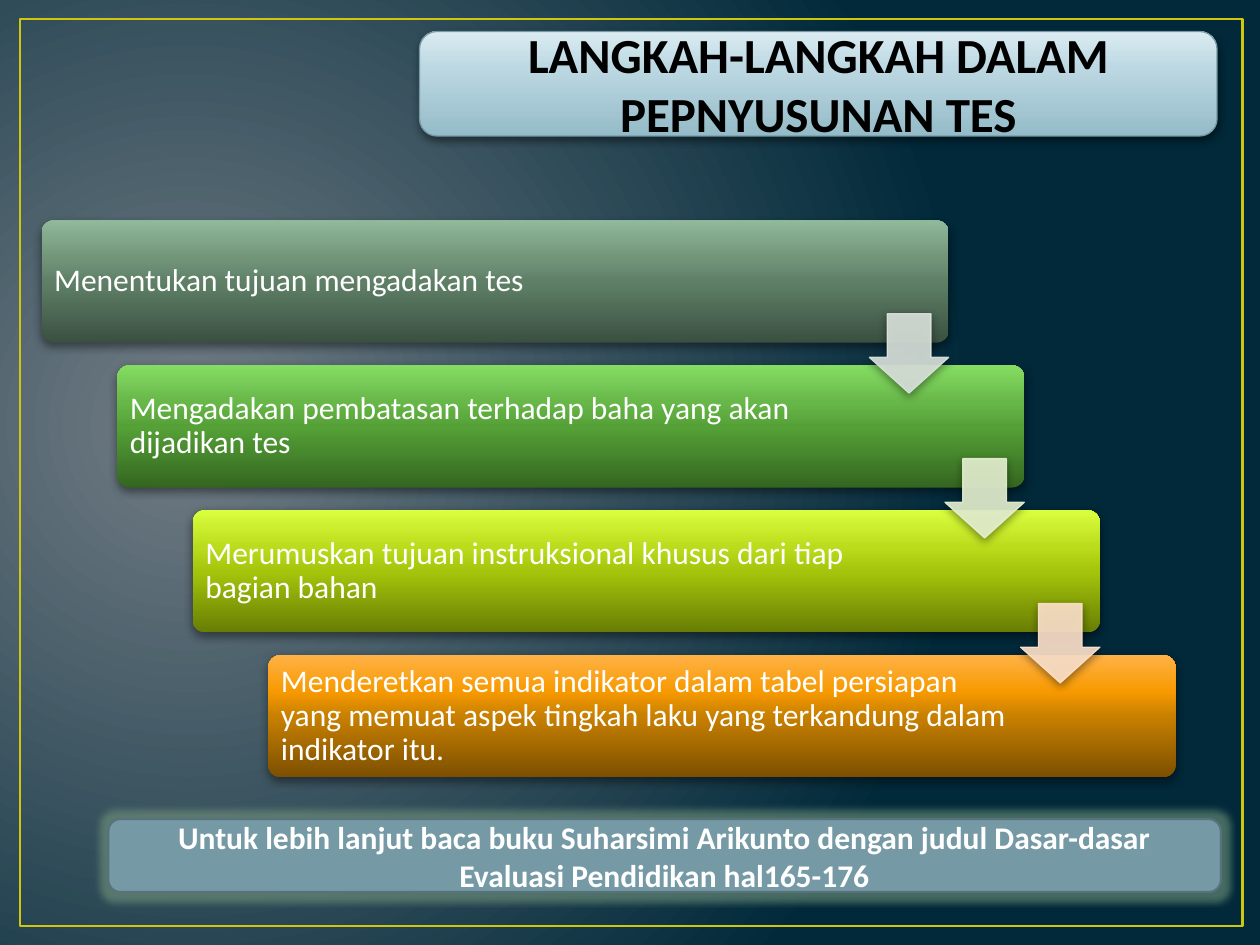
from lxml import etree
from pptx import Presentation
from pptx.dml.color import RGBColor
from pptx.enum.shapes import MSO_SHAPE
from pptx.enum.text import MSO_ANCHOR, PP_ALIGN
from pptx.oxml import parse_xml
from pptx.oxml.ns import qn
from pptx.util import Inches, Pt

RECTANGLE = MSO_SHAPE.RECTANGLE
ROUNDED = MSO_SHAPE.ROUNDED_RECTANGLE
DOWN_ARROW = MSO_SHAPE.DOWN_ARROW
MIDDLE = MSO_ANCHOR.MIDDLE
CENTER, LEFT = PP_ALIGN.CENTER, PP_ALIGN.LEFT
DRAWING = 'xmlns:a="http://schemas.openxmlformats.org/drawingml/2006/main"'
FONT = "Calibri"

COLORS = {
    "frame": "CFC60D", "white": "FFFFFF", "black": "000000",
    "title_line": "759AA5", "note": "759AA5", "note_line": "57727A",
    "glow": "73967B",
}
BACKGROUND = [(0, "717C84"), (100, "01293A")]
TITLE_STOPS = [(0, "94BBC8"), (65, "BCD8E2"), (100, "DBEBF1")]
STEP_POSITIONS = (0, 50, 70, 100)

# Text, text width, gradient from bottom to top, colour of the arrow below
STEPS = [
    ("Menentukan tujuan mengadakan tes", 6.07,
     ("3A5040", "5F8067", "73967B", "90B89A"), "DBE3DD"),
    ("Mengadakan pembatasan terhadap baha yang akan dijadikan tes", 5.91,
     ("346620", "55A137", "68B749", "85DD63"), "E7F2D2"),
    ("Merumuskan tujuan instruksional khusus dari tiap bagian bahan", 5.91,
     ("687D04", "A4C50B", "BADC1C", "DAFF3E"), "FFE3CC"),
    ("Menderetkan semua indikator dalam tabel persiapan yang memuat aspek "
     "tingkah laku yang terkandung dalam indikator itu.", 5.91,
     ("7C4F00", "C88000", "F79900", "FFB246"), None),
]
STEP_LEFT, STEP_TOP, STEP_WIDTH, STEP_HEIGHT = 0.33, 1.75, 7.2, 0.97
SHIFT_X, SHIFT_Y = 0.6, 1.15
ARROW_SIZE = 0.63


def set_gradient(fill, owner, stops, direction):
    """Fill with the given stops; direction is the closing XML element."""
    fill.gradient()
    old = next(owner.iter(qn("a:gradFill")))
    marks = "".join(
        f'<a:gs pos="{position * 1000}"><a:srgbClr val="{color}"/></a:gs>'
        for position, color in stops)
    new = parse_xml(f'<a:gradFill {DRAWING} rotWithShape="1">'
                    f'<a:gsLst>{marks}</a:gsLst>{direction}</a:gradFill>')
    old.getparent().replace(old, new)


def fill_upward(shape, stops):
    set_gradient(shape.fill, shape._element.spPr, stops,
                 '<a:lin ang="16200000" scaled="0"/>')


def add_effect(shape, xml):
    shape.shadow.inherit = False
    effects = shape._element.spPr.find(qn("a:effectLst"))
    effects.append(parse_xml(xml))


def add_shadow(shape):
    add_effect(shape, f'<a:outerShdw {DRAWING} blurRad="63500" dist="25400" '
                      'dir="5400000" rotWithShape="0">'
                      f'<a:srgbClr val="{COLORS["black"]}">'
                      '<a:alpha val="43000"/></a:srgbClr></a:outerShdw>')


def add_glow(shape):
    add_effect(shape, f'<a:glow {DRAWING} rad="101600">'
                      f'<a:srgbClr val="{COLORS["glow"]}">'
                      '<a:alpha val="60000"/></a:srgbClr></a:glow>')


def add_box(page, kind, place, line=None, width=0.75):
    box = page.shapes.add_shape(kind, *map(Inches, place))
    box.shadow.inherit = False
    if line:
        box.line.color.rgb = RGBColor.from_string(line)
        box.line.width = Pt(width)
    else:
        box.line.fill.background()
    return box


def write_text(box, text, size, color, bold=False, align=LEFT):
    frame = box.text_frame
    frame.word_wrap = True
    frame.vertical_anchor = MIDDLE
    paragraph = frame.paragraphs[0]
    paragraph.text = text
    paragraph.alignment = align
    paragraph.font.name = FONT
    paragraph.font.size = Pt(size)
    paragraph.font.bold = bold
    paragraph.font.color.rgb = RGBColor.from_string(color)
    return frame


def add_step(page, left, top, text, text_width, colors):
    bar = add_box(page, ROUNDED, (left, top, STEP_WIDTH, STEP_HEIGHT))
    bar.adjustments[0] = 0.1
    fill_upward(bar, zip(STEP_POSITIONS, colors))
    add_shadow(bar)
    label = page.shapes.add_textbox(
        *map(Inches, (left + 0.03, top + 0.03, text_width, 0.91)))
    frame = write_text(label, text, 18, COLORS["white"])
    frame.margin_left = frame.margin_right = Inches(0.07)
    frame.margin_top = frame.margin_bottom = Inches(0.07)
    frame.paragraphs[0].line_spacing = 0.9


def add_arrow(page, left, top, color):
    arrow = add_box(page, DOWN_ARROW, (left, top, ARROW_SIZE, ARROW_SIZE), color)
    arrow.adjustments[0] = 0.55
    arrow.adjustments[1] = 0.45
    arrow.fill.solid()
    arrow.fill.fore_color.rgb = RGBColor.from_string(color)
    for paint in arrow._element.spPr.iter(qn("a:srgbClr")):
        etree.SubElement(paint, qn("a:alpha")).set("val", "90000")
    add_shadow(arrow)


def main():
    deck = Presentation()
    deck.slide_width, deck.slide_height = Inches(10), Inches(7.5)
    page = deck.slides.add_slide(deck.slide_layouts[6])

    # Background and frame
    set_gradient(page.background.fill, page._element, BACKGROUND,
                 '<a:path path="circle"><a:fillToRect l="15000" t="50000" '
                 'r="85000" b="60000"/></a:path>')
    border = add_box(page, RECTANGLE, (0.16, 0.15, 9.7, 7.2), COLORS["frame"], 1.5)
    border.fill.background()

    # Staircase of steps, then the arrows that join them
    places = [(STEP_LEFT + SHIFT_X * index, STEP_TOP + SHIFT_Y * index)
              for index in range(len(STEPS))]
    for (left, top), (text, text_width, colors, _) in zip(places, STEPS):
        add_step(page, left, top, text, text_width, colors)
    for (left, top), (*_, arrow_color) in zip(places, STEPS):
        if arrow_color:
            add_arrow(page, left + STEP_WIDTH - ARROW_SIZE, top + 0.74, arrow_color)

    # Title
    title = add_box(page, ROUNDED, (3.33, 0.25, 6.33, 0.83), COLORS["title_line"])
    fill_upward(title, TITLE_STOPS)
    add_shadow(title)
    write_text(title, "LANGKAH-LANGKAH DALAM PEPNYUSUNAN TES", 28,
               COLORS["black"], True, CENTER)

    # Reading note
    note = add_box(page, ROUNDED, (0.86, 6.5, 8.83, 0.58), COLORS["note_line"], 1.25)
    note.fill.solid()
    note.fill.fore_color.rgb = RGBColor.from_string(COLORS["note"])
    add_glow(note)
    write_text(note, "Untuk lebih lanjut baca buku Suharsimi Arikunto dengan judul "
               "Dasar-dasar Evaluasi Pendidikan hal165-176", 18,
               COLORS["white"], True, CENTER)

    deck.save("out.pptx")


if __name__ == "__main__":
    main()
